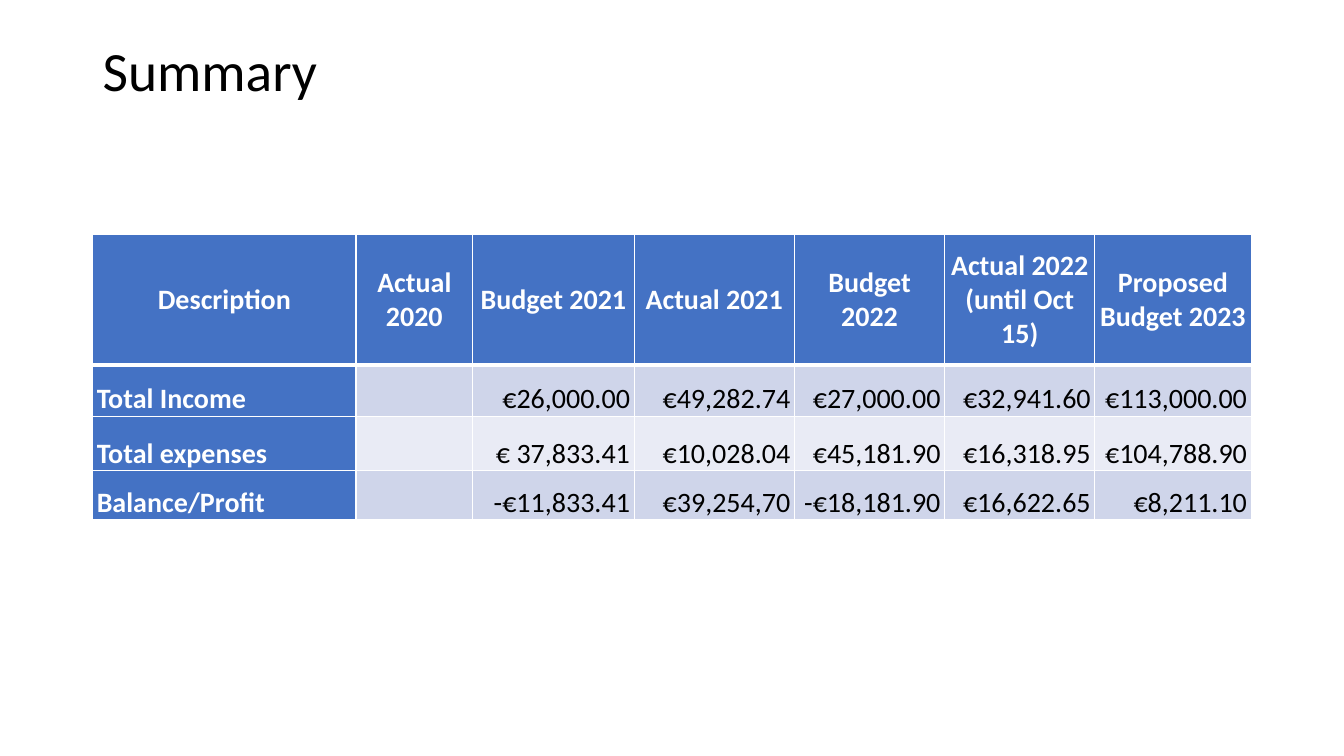
import pptx
import pptx.util
import pptx.dml.color
import pptx.enum.text
import pptx.oxml
import pptx.oxml.ns

Inches, Pt = pptx.util.Inches, pptx.util.Pt
RGBColor = pptx.dml.color.RGBColor
ALIGN = pptx.enum.text.PP_ALIGN
ANCHOR = pptx.enum.text.MSO_ANCHOR

BLACK = RGBColor(0x00, 0x00, 0x00)
WHITE = RGBColor(0xFF, 0xFF, 0xFF)
BLUE = RGBColor(0x44, 0x72, 0xC4)
BANDS = [RGBColor(0xCF, 0xD5, 0xEA), RGBColor(0xE9, 0xEB, 0xF5)]

SLIDE_W, SLIDE_H = 13.33, 7.5
LEFT, WIDTH = 0.92, 11.5
COLUMNS = [2.61, 1.16, 1.6, 1.59, 1.49, 1.49, 1.55]
ROWS = [1.29, 0.51, 0.54, 0.49]
SUMMARY = [
    ["Description", "Actual 2020", "Budget 2021", "Actual 2021", "Budget 2022",
     "Actual 2022 (until Oct 15)", "Proposed Budget 2023"],
    ["Total Income", "", "€26,000.00", "€49,282.74", "€27,000.00",
     "€32,941.60", "€113,000.00"],
    ["Total expenses", "", "€ 37,833.41", "€10,028.04", "€45,181.90",
     "€16,318.95", "€104,788.90"],
    ["Balance/Profit", "", "-€11,833.41", "€39,254,70", "-€18,181.90",
     "€16,622.65", "€8,211.10"],
]


def write(tf, text, size=20, color=BLACK, bold=False, align=ALIGN.LEFT, spacing=1.0):
    p = tf.paragraphs[0]
    p.alignment = align
    p.line_spacing = spacing
    p.font.size = Pt(size)
    if text:
        r = p.add_run()
        r.text = text
        r.font.name = "Calibri"
        r.font.size = Pt(size)
        r.font.bold = bold
        r.font.color.rgb = color


def add_title(slide, text):
    sp = slide.shapes.add_textbox(Inches(LEFT), Inches(0.4), Inches(WIDTH), Inches(0.65))
    tf = sp.text_frame
    tf.word_wrap = True
    tf.vertical_anchor = ANCHOR.MIDDLE
    write(tf, text, size=39.6, spacing=0.9)


def set_borders(cell, **widths):
    """Draw white borders; each keyword is a side (L, R, T, B) with its width in points."""
    tc_pr = cell._tc.get_or_add_tcPr()
    for i, (side, width) in enumerate(widths.items()):
        tc_pr.insert(i, pptx.oxml.parse_xml(
            f'<a:ln{side} {pptx.oxml.ns.nsdecls("a")} w="{Pt(width)}"><a:solidFill>'
            f'<a:srgbClr val="{WHITE}"/></a:solidFill></a:ln{side}>'))


def format_cell(cell, text, row, col):
    header, label = row == 0, col == 0
    strong = header or label
    cell.margin_left = cell.margin_right = Inches(0.04)
    cell.margin_top = cell.margin_bottom = 0
    cell.vertical_anchor = ANCHOR.MIDDLE if header else ANCHOR.BOTTOM
    cell.fill.solid()
    cell.fill.fore_color.rgb = BLUE if strong else BANDS[(row - 1) % 2]
    set_borders(cell, L=1, R=1, T=3 if row == 1 else 1, B=3 if header else 1)
    align = ALIGN.CENTER if header else ALIGN.LEFT if label else ALIGN.RIGHT
    write(cell.text_frame, text, color=WHITE if strong else BLACK, bold=strong, align=align)


def add_summary_table(slide):
    table = slide.shapes.add_table(len(ROWS), len(COLUMNS), Inches(LEFT), Inches(2.33),
                                   Inches(WIDTH), Inches(sum(ROWS))).table
    table.first_col = True
    for column, width in zip(table.columns, COLUMNS):
        column.width = Inches(width)
    for row, height in zip(table.rows, ROWS):
        row.height = Inches(height)
    for i, texts in enumerate(SUMMARY):
        for j, text in enumerate(texts):
            format_cell(table.cell(i, j), text, i, j)


def main():
    prs = pptx.Presentation()
    prs.slide_width, prs.slide_height = Inches(SLIDE_W), Inches(SLIDE_H)
    slide = prs.slides.add_slide(prs.slide_layouts[6])
    add_title(slide, "Summary")
    add_summary_table(slide)
    prs.save("out.pptx")


if __name__ == "__main__":
    main()
